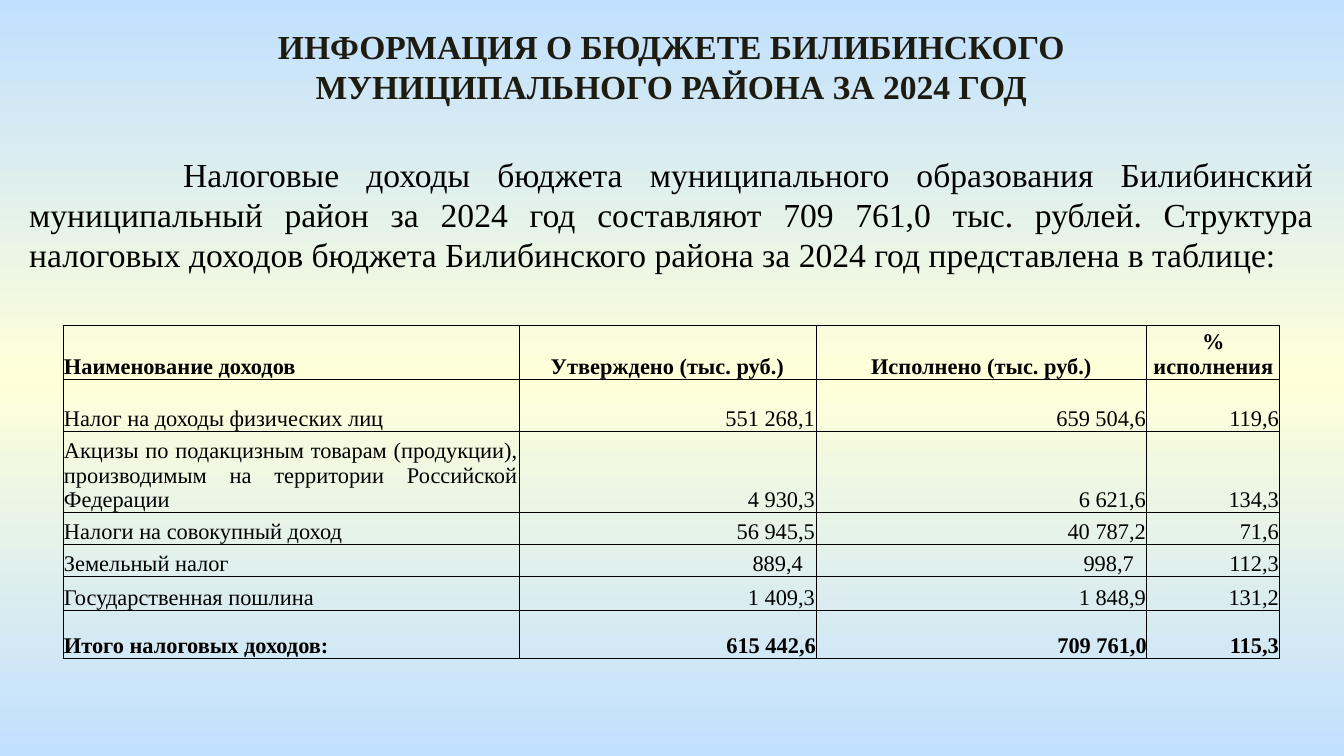
import copy

import pptx
import pptx.dml.color
import pptx.enum.text
import pptx.oxml
import pptx.oxml.ns
import pptx.util

EMU_PER_INCH = 914400
PX_PER_INCH = 134.4
ALIGN = pptx.enum.text.PP_ALIGN
ANCHOR = pptx.enum.text.MSO_ANCHOR
FONT = "Times New Roman"
TITLE = "ИНФОРМАЦИЯ О БЮДЖЕТЕ БИЛИБИНСКОГО МУНИЦИПАЛЬНОГО РАЙОНА ЗА 2024 ГОД"
INTRO = (
    "Налоговые доходы бюджета муниципального образования Билибинский "
    "муниципальный район за 2024 год составляют 709 761,0 тыс. рублей. "
    "Структура налоговых доходов бюджета Билибинского района за 2024 год "
    "представлена в таблице:"
)
COLUMN_WIDTHS = [456, 297, 331, 133]
ROW_HEIGHTS = [54, 53, 81, 32, 32, 34, 48]
INCOME = [
    ["Наименование доходов", "Утверждено (тыс. руб.)", "Исполнено (тыс. руб.)", "% исполнения"],
    ["Налог на доходы физических лиц", "551 268,1", "659 504,6", "119,6"],
    [
        "Акцизы по подакцизным товарам (продукции), производимым на территории "
        "Российской Федерации",
        "4 930,3", "6 621,6", "134,3",
    ],
    ["Налоги на совокупный доход", "56 945,5", "40 787,2", "71,6"],
    ["Земельный налог", "889,4", "998,7", "112,3"],
    ["Государственная пошлина", "1 409,3", "1 848,9", "131,2"],
    ["Итого налоговых доходов:", "615 442,6", "709 761,0", "115,3"],
]
LAND_TAX_ROW = 4


def px(length):
    """Turn a length in px into EMU."""
    return pptx.util.Emu(round(length * EMU_PER_INCH / PX_PER_INCH))


def color(value):
    """Make a colour from a hex string."""
    return pptx.dml.color.RGBColor.from_string(value)


def apply(target, values):
    """Set each attribute of the target from a dict."""
    for name, value in values.items():
        setattr(target, name, value)


def paint_background(page, colors):
    """Fill the page with an evenly spaced vertical gradient."""
    fill = page.background.fill
    fill.gradient()
    fill.gradient_angle = 270
    stops = page.element.find(".//" + pptx.oxml.ns.qn("a:gsLst"))
    stops.insert(1, copy.deepcopy(stops[0]))
    for index, (stop, value) in enumerate(zip(fill.gradient_stops, colors)):
        stop.position = index / (len(colors) - 1)
        stop.color.rgb = color(value)


def write(frame, text, align, size, bold=False, ink="000000"):
    """Write one formatted paragraph and return it."""
    para = frame.paragraphs[0]
    para.alignment = align
    span = para.add_run()
    span.text = text
    apply(span.font, {"name": FONT, "size": pptx.util.Pt(size), "bold": bold})
    span.font.color.rgb = color(ink)
    return para


def place(box, left, top, width, height):
    """Put a text box in place and let its text wrap from the top."""
    apply(box, {"left": px(left), "top": px(top), "width": px(width), "height": px(height)})
    apply(box.text_frame, {
        "word_wrap": True,
        "auto_size": pptx.enum.text.MSO_AUTO_SIZE.NONE,
        "vertical_anchor": ANCHOR.TOP,
    })
    return box.text_frame


def add_title(page):
    """Fill the title placeholder."""
    frame = place(page.shapes.title, 152, 19, 1039, 95)
    write(frame, TITLE, ALIGN.CENTER, 18, True, "1E1C11")


def add_intro(page):
    """Add the justified paragraph with its first-line indent."""
    frame = place(page.shapes.add_textbox(0, 0, 0, 0), 16, 147, 1311, 136)
    para = write(frame, INTRO, ALIGN.JUSTIFY, 18)
    para._p.get_or_add_pPr().set("indent", str(px(154)))


def outline(cell):
    """Draw thin black borders on all sides of a cell."""
    properties = cell._tc.get_or_add_tcPr()
    for index, side in enumerate(["lnL", "lnR", "lnT", "lnB"]):
        border = pptx.oxml.parse_xml(
            f'<a:{side} {pptx.oxml.ns.nsdecls("a")} w="{pptx.util.Pt(0.5)}">'
            f'<a:solidFill><a:srgbClr val="000000"/></a:solidFill></a:{side}>'
        )
        properties.insert(index, border)


def fill_cell(cell, text, row, column):
    """Write and format one cell according to its row and column."""
    is_header = row == 0
    is_total = row == len(INCOME) - 1
    is_figure = column > 0
    shifted = row == LAND_TAX_ROW and column in (1, 2)
    flush = is_total and column in (1, 2)
    margin = 0 if flush else 1
    apply(cell, {
        "vertical_anchor": ANCHOR.BOTTOM,
        "margin_left": px(margin),
        "margin_right": px(13 if shifted else margin),
        "margin_top": px(margin),
        "margin_bottom": 0,
    })
    if not is_figure:
        align = ALIGN.JUSTIFY
    else:
        align = ALIGN.CENTER if is_header else ALIGN.RIGHT
    write(cell.text_frame, text, align, 12, is_header or is_total)
    cell.fill.background()
    outline(cell)


def add_income_table(page):
    """Add the table of tax income."""
    table = page.shapes.add_table(
        len(ROW_HEIGHTS), len(COLUMN_WIDTHS),
        px(63), px(325), px(sum(COLUMN_WIDTHS)), px(sum(ROW_HEIGHTS)),
    ).table
    apply(table, {"first_row": False, "horz_banding": False})
    for column, width in zip(table.columns, COLUMN_WIDTHS):
        column.width = px(width)
    for row, height in zip(table.rows, ROW_HEIGHTS):
        row.height = px(height)
    for row, texts in enumerate(INCOME):
        for column, text in enumerate(texts):
            fill_cell(table.cell(row, column), text, row, column)


def main():
    """Build the slide and save it."""
    deck = pptx.Presentation()
    apply(deck, {"slide_width": px(1344), "slide_height": px(756)})
    page = deck.slides.add_slide(deck.slide_layouts.get_by_name("Title Only"))
    paint_background(page, ["C1E0FF", "FFFFD9", "C1E0FF"])
    add_title(page)
    add_income_table(page)
    add_intro(page)
    deck.save("out.pptx")


if __name__ == "__main__":
    main()
